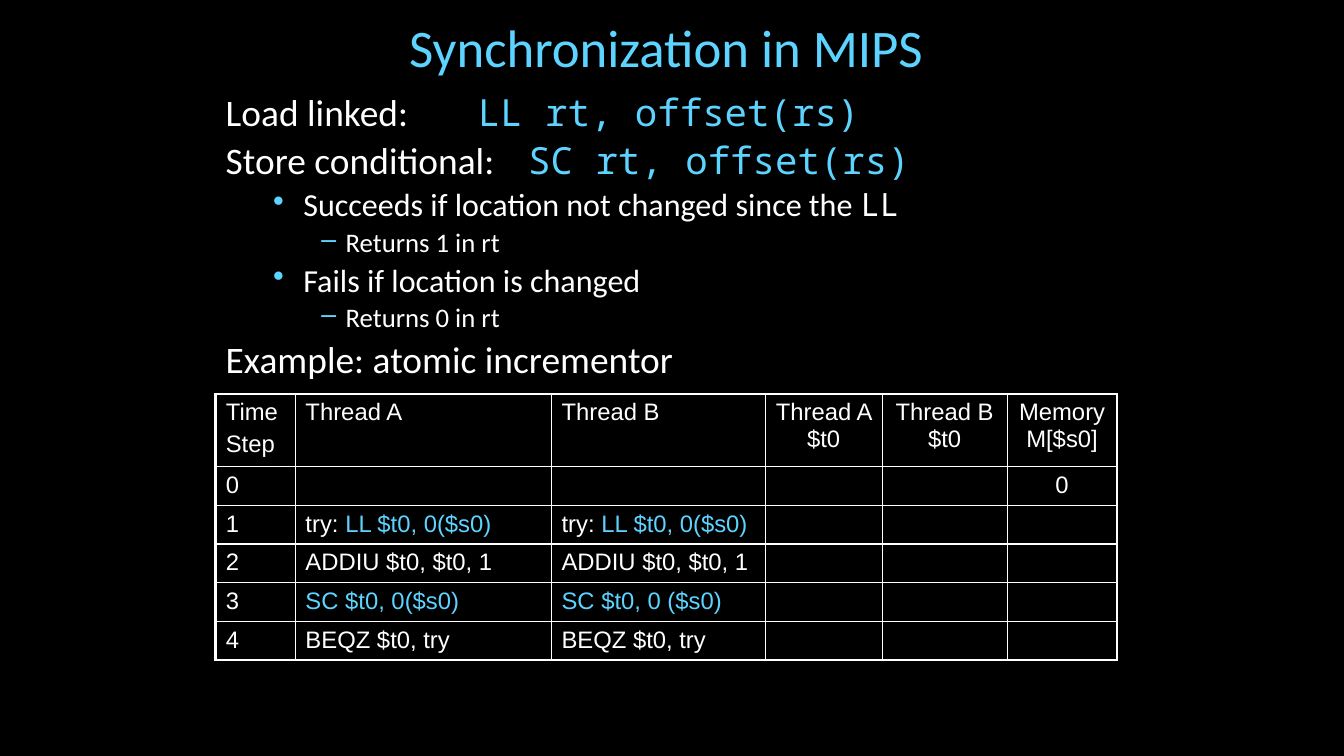
from dataclasses import dataclass

from lxml import etree
from pptx import Presentation
from pptx import util as u
from pptx.dml.color import RGBColor
from pptx.enum import text
from pptx.oxml import ns

BLACK = RGBColor(0x00, 0x00, 0x00)
WHITE = RGBColor(0xFF, 0xFF, 0xFF)
SKY = RGBColor(0x5D, 0xD4, 0xFF)
SANS, MONO, TABLE_FONT = "Calibri", "Noto Sans Mono", "Arial"
TABLE_SIZE = 17
THICK, THIN = 2.25, 1


@dataclass(frozen=True)
class Span:
    text: str
    color: RGBColor = WHITE
    font: str = SANS


@dataclass(frozen=True)
class Level:
    size: float
    margin: float = 0
    hanging: float = 0
    bullet: str = ""


TOP = Level(26.7)
POINT = Level(22.9, 0.77, 0.3, "•")
DETAIL = Level(19.1, 1.19, 0.24, "–")
TAB_STOPS = (1.92, 2.87)

BODY = [
    (TOP, [Span("Load linked: \t\t"), Span("LL rt, offset(rs)", SKY, MONO)]),
    (TOP, [Span("Store conditional:\t"), Span("SC rt, offset(rs)", SKY, MONO)]),
    (POINT, [Span("Succeeds if location not changed since the "),
             Span("LL", font=MONO)]),
    (DETAIL, [Span("Returns 1 in rt")]),
    (POINT, [Span("Fails if location is changed")]),
    (DETAIL, [Span("Returns 0 in rt")]),
    (TOP, [Span("Example: atomic incrementor")]),
]


def plain(words: str) -> Span:
    return Span(words, WHITE, TABLE_FONT)


def accent(words: str) -> Span:
    return Span(words, SKY, TABLE_FONT)


# Each cell is a list of paragraphs, each paragraph a list of spans
TRY_LOAD = [[plain("try: "), accent("LL $t0, 0($s0)")]]
INCREMENT = [[plain("ADDIU $t0, $t0, 1")]]
RETRY = [[plain("BEQZ $t0, try")]]
STEPS = [
    [[], [], [], [], [[plain("0")]]],
    [TRY_LOAD, TRY_LOAD],
    [INCREMENT, INCREMENT],
    [[[accent("SC $t0, 0($s0)")]], [[accent("SC $t0, 0 ($s0)")]]],
    [RETRY, RETRY],
]
HEADINGS = [[[plain("Time")], [plain("Step")]]] + [
    [[plain(heading)]] for heading in
    ("Thread A", "Thread B", "Thread A $t0", "Thread B $t0", "Memory M[$s0]")]
ROWS = [HEADINGS] + [[[[plain(str(step))]]] + cells
                     for step, cells in enumerate(STEPS)]
COLUMN_WIDTHS = (0.79, 2.54, 2.12, 1.16, 1.24, 1.09)
ROW_HEIGHTS = (0.72,) + (0.38,) * len(STEPS)
FIRST_CENTERED = 3


def write_spans(para, spans: list[Span], size: float) -> None:
    for span in spans:
        run = para.add_run()
        run.text = span.text
        run.font.size = u.Pt(size)
        run.font.name = span.font
        run.font.color.rgb = span.color


def add_box(page, left: float, top: float, width: float, height: float):
    box = page.shapes.add_textbox(*map(u.Inches, (left, top, width, height)))
    box.text_frame.word_wrap = True
    return box.text_frame


def next_paragraph(frame, index: int, size: float):
    """Return the paragraph at index, spaced by a fifth of its size."""
    if index == 0:
        return frame.paragraphs[0]
    para = frame.add_paragraph()
    para.space_before = u.Pt(round(size * 0.2, 1))
    return para


def set_level(para, level: Level) -> None:
    para.line_spacing = 0.9
    props = para._p.get_or_add_pPr()
    props.set("marL", str(u.Inches(level.margin)))
    props.set("indent", str(-u.Inches(level.hanging)))
    if level.bullet:
        color = etree.SubElement(props, ns.qn("a:buClr"))
        etree.SubElement(color, ns.qn("a:srgbClr"), val=str(SKY))
        etree.SubElement(props, ns.qn("a:buChar"), char=level.bullet)
    else:
        etree.SubElement(props, ns.qn("a:buNone"))
        stops = etree.SubElement(props, ns.qn("a:tabLst"))
        for stop in TAB_STOPS:
            etree.SubElement(stops, ns.qn("a:tab"),
                             pos=str(u.Inches(stop)), algn="l")


def set_borders(cell, thick_sides: str) -> None:
    props = cell._tc.get_or_add_tcPr()
    for index, side in enumerate("LRTB"):
        weight = THICK if side in thick_sides else THIN
        line = etree.Element(ns.qn(f"a:ln{side}"), w=str(u.Pt(weight)))
        fill = etree.SubElement(line, ns.qn("a:solidFill"))
        etree.SubElement(fill, ns.qn("a:srgbClr"), val=str(WHITE))
        props.insert(index, line)


def fill_cell(cell, paragraphs: list[list[Span]], centered: bool) -> None:
    cell.fill.background()
    frame = cell.text_frame
    for index, spans in enumerate(paragraphs):
        para = next_paragraph(frame, index, TABLE_SIZE)
        if centered:
            para.alignment = text.PP_ALIGN.CENTER
        write_spans(para, spans, TABLE_SIZE)
    if not paragraphs:
        etree.SubElement(frame.paragraphs[0]._p, ns.qn("a:endParaRPr"),
                         sz=str(TABLE_SIZE * 100))


def add_trace_table(page) -> None:
    area = (2.14, 3.91, sum(COLUMN_WIDTHS), sum(ROW_HEIGHTS))
    table = page.shapes.add_table(len(ROWS), len(COLUMN_WIDTHS),
                                  *map(u.Inches, area)).table
    table.first_row = table.horz_banding = False
    for column, width in zip(table.columns, COLUMN_WIDTHS):
        column.width = u.Inches(width)
    last_row, last_column = len(ROWS) - 1, len(COLUMN_WIDTHS) - 1
    for r, (cells, height) in enumerate(zip(ROWS, ROW_HEIGHTS)):
        table.rows[r].height = u.Inches(height)
        for c in range(len(COLUMN_WIDTHS)):
            cell = table.cell(r, c)
            fill_cell(cell, cells[c] if c < len(cells) else [],
                      c >= FIRST_CENTERED)
            outer = {"L": c == 0, "R": c == last_column,
                     "T": r == 0, "B": r == last_row}
            set_borders(cell, "".join(s for s, edge in outer.items() if edge))


def main() -> None:
    deck = Presentation()
    deck.slide_width, deck.slide_height = u.Inches(13.33), u.Inches(7.5)
    page = deck.slides.add_slide(deck.slide_layouts[6])
    page.background.fill.solid()
    page.background.fill.fore_color.rgb = BLACK

    # Title
    title = add_box(page, 0.33, 0.17, 12.67, 0.58)
    title.vertical_anchor = text.MSO_ANCHOR.MIDDLE
    title.paragraphs[0].alignment = text.PP_ALIGN.CENTER
    write_spans(title.paragraphs[0], [Span("Synchronization in MIPS ", SKY)], 37.7)

    # Thread trace
    add_trace_table(page)

    # Instruction summary
    body = add_box(page, 2.14, 0.89, 9.05, 3.25)
    for index, (level, spans) in enumerate(BODY):
        para = next_paragraph(body, index, level.size)
        set_level(para, level)
        write_spans(para, spans, level.size)

    deck.save("out.pptx")


if __name__ == "__main__":
    main()
